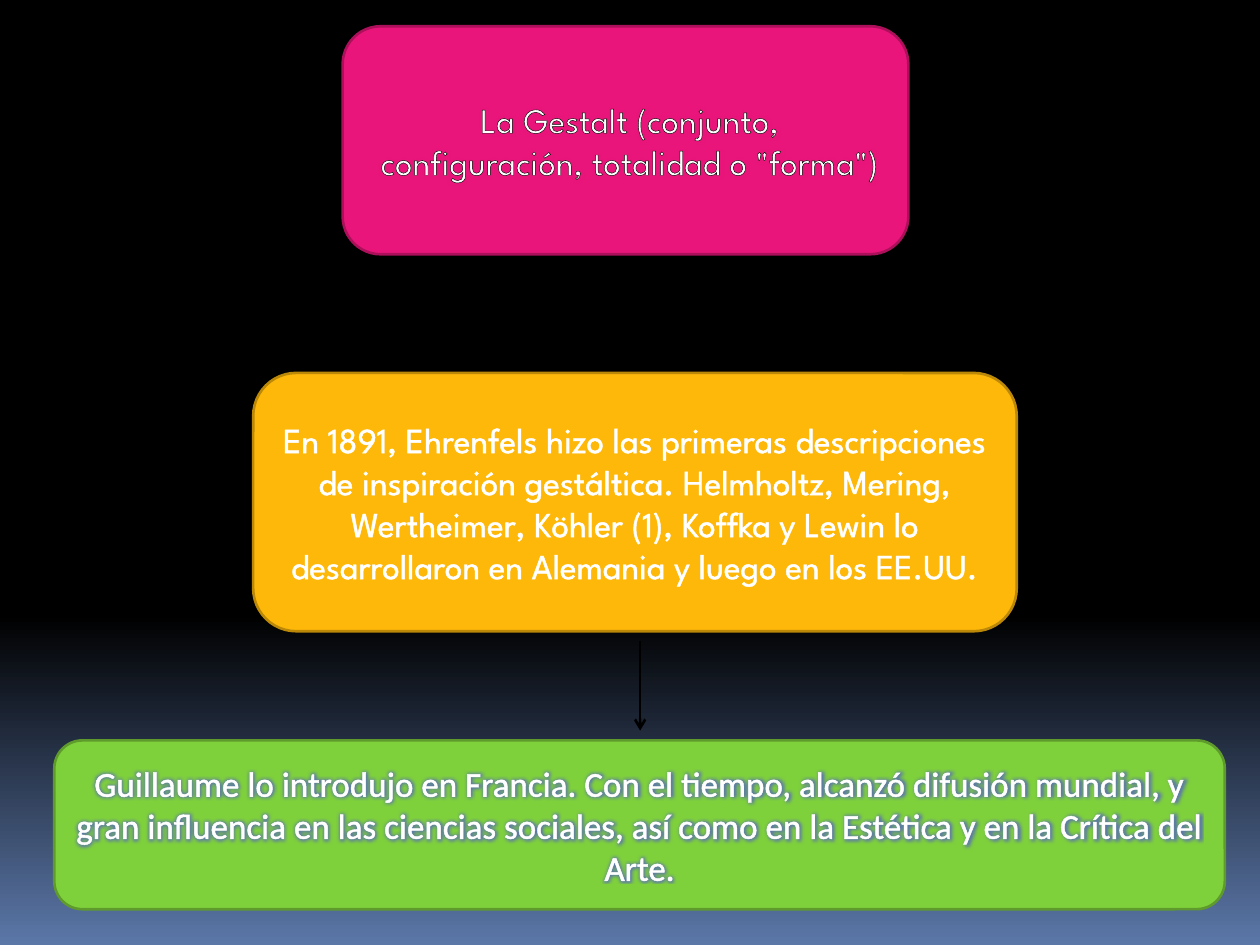
from copy import deepcopy
from dataclasses import dataclass

from lxml import etree
from pptx import Presentation
from pptx.dml.color import RGBColor
from pptx.enum.shapes import MSO_CONNECTOR, MSO_SHAPE
from pptx.enum.text import MSO_ANCHOR, PP_ALIGN
from pptx.oxml.ns import qn
from pptx.util import Pt

ROUND = MSO_SHAPE.ROUNDED_RECTANGLE
LINE = MSO_CONNECTOR.STRAIGHT
MIDDLE = MSO_ANCHOR.MIDDLE
CENTER = PP_ALIGN.CENTER


@dataclass(frozen=True)
class Theme:
    black: str = "000000"
    white: str = "FFFFFF"
    sky: str = "5B77A8"
    pink: tuple = ("EA157A", "AD105A")
    gold: tuple = ("FEB80A", "BC8807")
    green: tuple = ("7FD13B", "5E9B2C")
    head: str = "League Spartan"
    body: str = "Calibri"
    size: float = 20
    edge: float = 1.5
    thin: float = 0.75
    thick: float = 1.45
    glow: float = 5


THEME = Theme()


def rgb(code):
    return RGBColor.from_string(code)


def add_color(node, code):
    etree.SubElement(node, qn("a:srgbClr"), val=code)


def paint_back(slide):
    fill = slide.background.fill
    fill.gradient()
    fill.gradient_angle = 270
    first, last = fill.gradient_stops
    first.color.rgb, first.position = rgb(THEME.black), 0
    last.color.rgb, last.position = rgb(THEME.sky), 1
    stop = next(slide.element.iter(qn("a:gs")))
    hold = deepcopy(stop)
    hold.set("pos", "65000")
    stop.addnext(hold)


def style_text(props, edge, width, glow):
    line = etree.Element(qn("a:ln"), w=str(Pt(width)))
    add_color(etree.SubElement(line, qn("a:solidFill")), edge)
    props.insert(0, line)
    if glow:
        effect = etree.Element(qn("a:effectLst"))
        halo = etree.SubElement(effect, qn("a:glow"), rad=str(Pt(THEME.glow)))
        add_color(halo, glow)
        props.find(qn("a:solidFill")).addnext(effect)


def add_card(slide, box, tone, lines, face, edge, width, glow=None):
    card = slide.shapes.add_shape(ROUND, *map(Pt, box))
    card.shadow.inherit = False
    card.fill.solid()
    card.fill.fore_color.rgb = rgb(tone[0])
    card.line.color.rgb = rgb(tone[1])
    card.line.width = Pt(THEME.edge)
    frame = card.text_frame
    frame.word_wrap = True
    frame.vertical_anchor = MIDDLE
    frame.text = "\n".join(lines)
    for para in frame.paragraphs:
        para.alignment = CENTER
        para.font.size = Pt(THEME.size)
        para.font.name = face
        para.font.color.rgb = rgb(THEME.white)
    for props in card.element.iter(qn("a:defRPr")):
        style_text(props, edge, width, glow)


def add_arrow(slide, left, top, drop=51):
    arrow = slide.shapes.add_connector(
        LINE, Pt(left), Pt(top), Pt(left), Pt(top + drop))
    arrow.line.color.rgb = rgb(THEME.black)
    arrow.line.width = Pt(THEME.edge)
    line = arrow.line.fill and arrow.element.spPr.find(qn("a:ln"))
    etree.SubElement(line, qn("a:tailEnd"), type="arrow")
    etree.SubElement(arrow.element.spPr, qn("a:effectLst"))


def main():
    deck = Presentation()
    deck.slide_width, deck.slide_height = Pt(720), Pt(540)
    slide = deck.slides.add_slide(deck.slide_layouts[6])
    paint_back(slide)
    add_card(slide, (195.8, 15, 323.3, 130.3), THEME.pink,
             [" La Gestalt (conjunto,",
              " configuración, totalidad o \"forma\")"],
             THEME.head, THEME.black, THEME.thin, THEME.pink[0])
    add_arrow(slide, 360, 151.2)
    add_card(slide, (144.7, 213.1, 436.3, 147.6), THEME.gold,
             ["En 1891, Ehrenfels hizo las primeras descripciones de "
              "inspiración gestáltica. Helmholtz, Mering, Wertheimer, "
              "Köhler (1), Koffka y Lewin lo desarrollaron en Alemania "
              "y luego en los EE.UU."],
             THEME.head, THEME.white, THEME.thick)
    add_arrow(slide, 365.8, 366.5)
    add_card(slide, (31, 423.1, 668.9, 96.5), THEME.green,
             ["Guillaume lo introdujo en Francia. Con el tiempo, alcanzó "
              "difusión mundial, y gran influencia en las ciencias "
              "sociales, así como en la Estética y en la Crítica del Arte."],
             THEME.body, THEME.white, THEME.thick, THEME.sky)
    deck.save("out.pptx")


if __name__ == "__main__":
    main()
